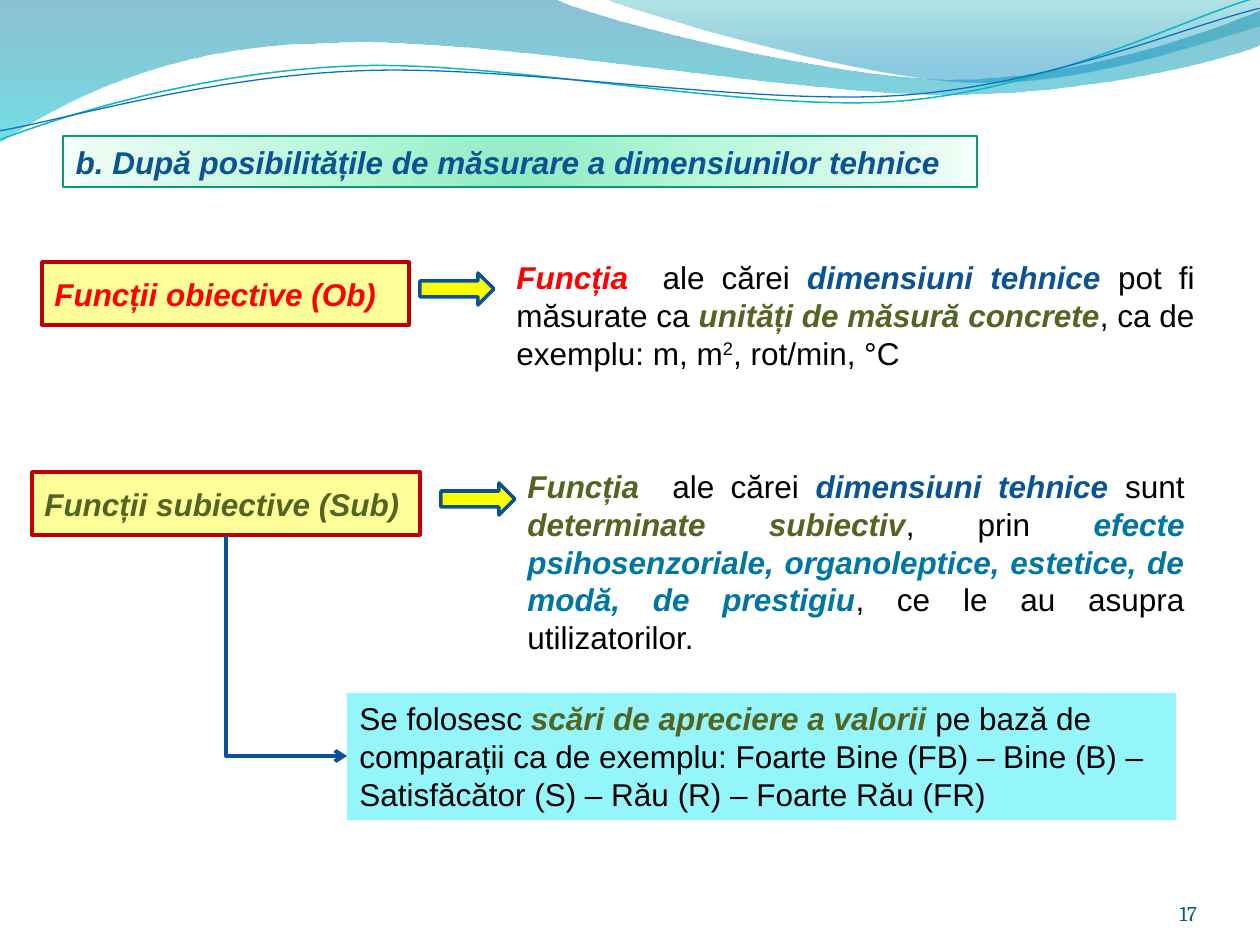
"""Build the slide on objective and subjective functions."""
from pptx import Presentation
from pptx.dml.color import RGBColor
from pptx.enum.shapes import MSO_CONNECTOR as Connector, MSO_SHAPE as Shape
from pptx.enum.text import MSO_ANCHOR as Anchor, MSO_AUTO_SIZE as AutoSize, PP_ALIGN as Align
from pptx.oxml import parse_xml
from pptx.oxml.ns import nsdecls, qn
from pptx.oxml.xmlchemy import OxmlElement
from pptx.util import Emu, Pt

SCALE = 914400 / 126
BLACK = RGBColor(0x00, 0x00, 0x00)
RED = RGBColor(0xFF, 0x00, 0x00)
OLIVE = RGBColor(0x54, 0x64, 0x22)
NAVY = RGBColor(0x0B, 0x53, 0x94)
TEAL = RGBColor(0x00, 0x76, 0xA3)
NUMBER_BLUE = RGBColor(0x04, 0x5D, 0x75)
YELLOW = RGBColor(0xFF, 0xFF, 0x00)
PALE_YELLOW = RGBColor(0xFF, 0xFF, 0x99)
AQUA = RGBColor(0x94, 0xF5, 0xFA)
DARK_RED = RGBColor(0xC0, 0x00, 0x00)
ARROW_BLUE = RGBColor(0x0B, 0x52, 0x92)
CONNECTOR_BLUE = RGBColor(0x09, 0x52, 0x95)
GREEN = RGBColor(0x0A, 0x9B, 0x74)
WAVE_CYAN = RGBColor(0x0A, 0xB8, 0xBF)
WAVE_BLUE = RGBColor(0x0F, 0x6F, 0xC6)


def px(*lengths):
    return [Emu(round(length * SCALE)) for length in lengths]


def write(shape, runs, align, anchor=Anchor.MIDDLE, size=18, font_name="Arial"):
    frame = shape.text_frame
    frame_format = {"word_wrap": True, "auto_size": AutoSize.NONE, "vertical_anchor": anchor}
    for name, value in frame_format.items():
        setattr(frame, name, value)
    paragraph = frame.paragraphs[0]
    paragraph.alignment = align
    for text, color, *baseline in runs:
        run = paragraph.add_run()
        run.text = text
        emphasis = color not in (BLACK, NUMBER_BLUE)
        font_format = {"name": font_name, "size": Pt(size), "bold": emphasis, "italic": emphasis}
        for name, value in font_format.items():
            setattr(run.font, name, value)
        run.font.color.rgb = color
        for value in baseline:
            run.font._element.set("baseline", str(value))


presentation = Presentation()
presentation.slide_width, presentation.slide_height = px(1260, 945)
slide = presentation.slides.add_slide(presentation.slide_layouts[5])
shapes = slide.shapes

title = shapes.title
title.left, title.top, title.width, title.height = px(63, 136, 914, 51)
title.line.color.rgb = GREEN
title.line.width = Pt(0.75)
write(title, [("b. După posibilitățile de măsurare a dimensiunilor tehnice", NAVY)], Align.JUSTIFY)

LINEAR = '<a:lin ang="5400000" scaled="1"/>'
CIRCLE = '<a:path path="circle"><a:fillToRect l="50000" t="130000" r="50000" b="-30000"/></a:path>'
gradients = [(title, [(0, "8DEAC2", 100), (43, "BAF8DB", 100), (93, "EAFCF3", 100),
                      (100, "F7FFFB", 100)], CIRCLE)]

waves = [
    ([(0, 0), (554, -1), (600, 21, 837, 79, 955, 79), (1075, 79, 1207, 33, 1260, 11),
      (1261, 45), (1239, 55, 1096, 96, 940, 94), (784, 94, 481, 35, 324, 43),
      (163, 45, 58, 105, -1, 142)], [(0, "0074A1", 45), (100, "00C6CF", 55)], None, 0),
    ([(604, -1), (641, 14, 859, 78, 969, 82), (1079, 87, 1211, 40, 1260, 26), (1260, 0)],
     [(0, "00A1A9", 30), (80, "008BBF", 45)], None, 0),
    ([(-2, 110), (58, 90, 199, 52, 350, 53), (499, 53, 745, 118, 896, 114),
      (1049, 109, 1184, 45, 1260, 27)], None, WAVE_CYAN, 0.85),
    ([(-2, 101), (57, 94, 207, 57, 357, 58), (509, 58, 750, 112, 902, 108),
      (1052, 104, 1188, 52, 1262, 38)], None, WAVE_BLUE, 0.75),
]
for segments, stops, line_color, line_width in waves:
    builder = shapes.build_freeform(*px(*segments[0]))
    builder.add_line_segments([px(*segment[-2:]) for segment in segments[1:]], close=bool(stops))
    wave = builder.convert_to_shape()
    wave.shadow.inherit = False
    for segment, line in zip(segments[1:], list(wave._element.iter(qn("a:lnTo")))):
        if len(segment) == 2:
            continue
        curve = OxmlElement("a:cubicBezTo")
        for x, y in zip(px(*segment[::2]), px(*segment[1::2])):
            point = OxmlElement("a:pt")
            point.set("x", str(x - wave.left))
            point.set("y", str(y - wave.top))
            curve.append(point)
        line.getparent().replace(line, curve)
    if stops:
        wave.line.fill.background()
        gradients.append((wave, stops, LINEAR))
    else:
        wave.rotation = 357.3
        wave.fill.background()
        wave.line.color.rgb = line_color
        wave.line.width = Pt(line_width)

for shape, stops, direction in gradients:
    shape.fill.gradient()
    old_fill = shape._element.spPr.find(qn("a:gradFill"))
    stop_xml = "".join(
        f'<a:gs pos="{position * 1000}"><a:srgbClr val="{color}">'
        f'<a:alpha val="{alpha * 1000}"/></a:srgbClr></a:gs>' for position, color, alpha in stops)
    new_fill = parse_xml(f'<a:gradFill {nsdecls("a")} rotWithShape="1">'
                         f'<a:gsLst>{stop_xml}</a:gsLst>{direction}</a:gradFill>')
    old_fill.getparent().replace(old_fill, new_fill)

blocks = [
    (Shape.RECTANGLE, (42, 262, 367, 63), PALE_YELLOW, DARK_RED,
     [("Funcții obiective (Ob)", RED)], Align.JUSTIFY, Anchor.MIDDLE),
    (Shape.RIGHT_ARROW, (420, 273, 74, 32), YELLOW, ARROW_BLUE, [], None, None),
    (Shape.RIGHT_ARROW, (441, 483, 74, 32), YELLOW, ARROW_BLUE, [], None, None),
    (Shape.RECTANGLE, (32, 472, 388, 63), PALE_YELLOW, DARK_RED,
     [("Funcții subiective (Sub)", OLIVE)], Align.JUSTIFY, Anchor.MIDDLE),
    (Shape.RECTANGLE, (347, 693, 829, 127), AQUA, None,
     [("Se folosesc ", BLACK), ("scări de apreciere a valorii", OLIVE),
      (" pe bază de comparații ca de exemplu: Foarte Bine (FB) – Bine (B) – "
       "Satisfăcător (S) – Rău (R) – Foarte Rău (FR)", BLACK)], Align.LEFT, Anchor.TOP),
]
for kind, box, fill_color, line_color, runs, align, anchor in blocks:
    block = shapes.add_shape(kind, *px(*box))
    block.shadow.inherit = False
    block.fill.solid()
    block.fill.fore_color.rgb = fill_color
    if line_color:
        block.line.color.rgb = line_color
        block.line.width = Pt(2)
    else:
        block.line.fill.background()
    if runs:
        write(block, runs, align, anchor)
subjective_box, scale_box = list(shapes)[-2:]

definitions = [
    ((504, 252, 703, 126),
     [("Funcția", RED), ("  ale cărei ", BLACK), ("dimensiuni tehnice ", NAVY),
      ("pot fi măsurate ca ", BLACK), ("unități de măsură concrete", OLIVE),
      (", ca de exemplu: m, m", BLACK), ("2", BLACK, 30000), (", rot/min, °C", BLACK)]),
    ((515, 462, 682, 199),
     [("Funcția", OLIVE), ("  ale cărei ", BLACK), ("dimensiuni tehnice ", NAVY),
      ("sunt ", BLACK), ("determinate subiectiv", OLIVE), (", prin ", BLACK),
      ("efecte psihosenzoriale, organoleptice, estetice, de modă, de prestigiu", TEAL),
      (", ce le au asupra utilizatorilor. ", BLACK)]),
]
for box, runs in definitions:
    write(shapes.add_textbox(*px(*box)), runs, Align.JUSTIFY)

connector = shapes.add_connector(Connector.ELBOW, *px(226, 535, 347, 756))
connector.begin_connect(subjective_box, 2)
connector.end_connect(scale_box, 1)
connector.left, connector.top, connector.width, connector.height = px(176, 585, 221, 121)
connector.line.color.rgb = CONNECTOR_BLUE
connector.line.width = Pt(2.25)
properties = connector._element.spPr
properties.find(qn("a:prstGeom")).set("prst", "bentConnector2")
transform = properties.find(qn("a:xfrm"))
for name, value in {"rot": "16200000", "flipH": "1"}.items():
    transform.set(name, value)
arrowhead = OxmlElement("a:tailEnd")
arrowhead.set("type", "arrow")
properties.find(qn("a:ln")).append(arrowhead)
properties.append(OxmlElement("a:effectLst"))

number = shapes.add_textbox(*px(1092, 876, 105, 50))
for side in ("left", "top", "right", "bottom"):
    setattr(number.text_frame, f"margin_{side}", 0)
write(number, [("17", NUMBER_BLUE)], Align.RIGHT, Anchor.BOTTOM, 12, "Cambria")

presentation.save("out.pptx")
